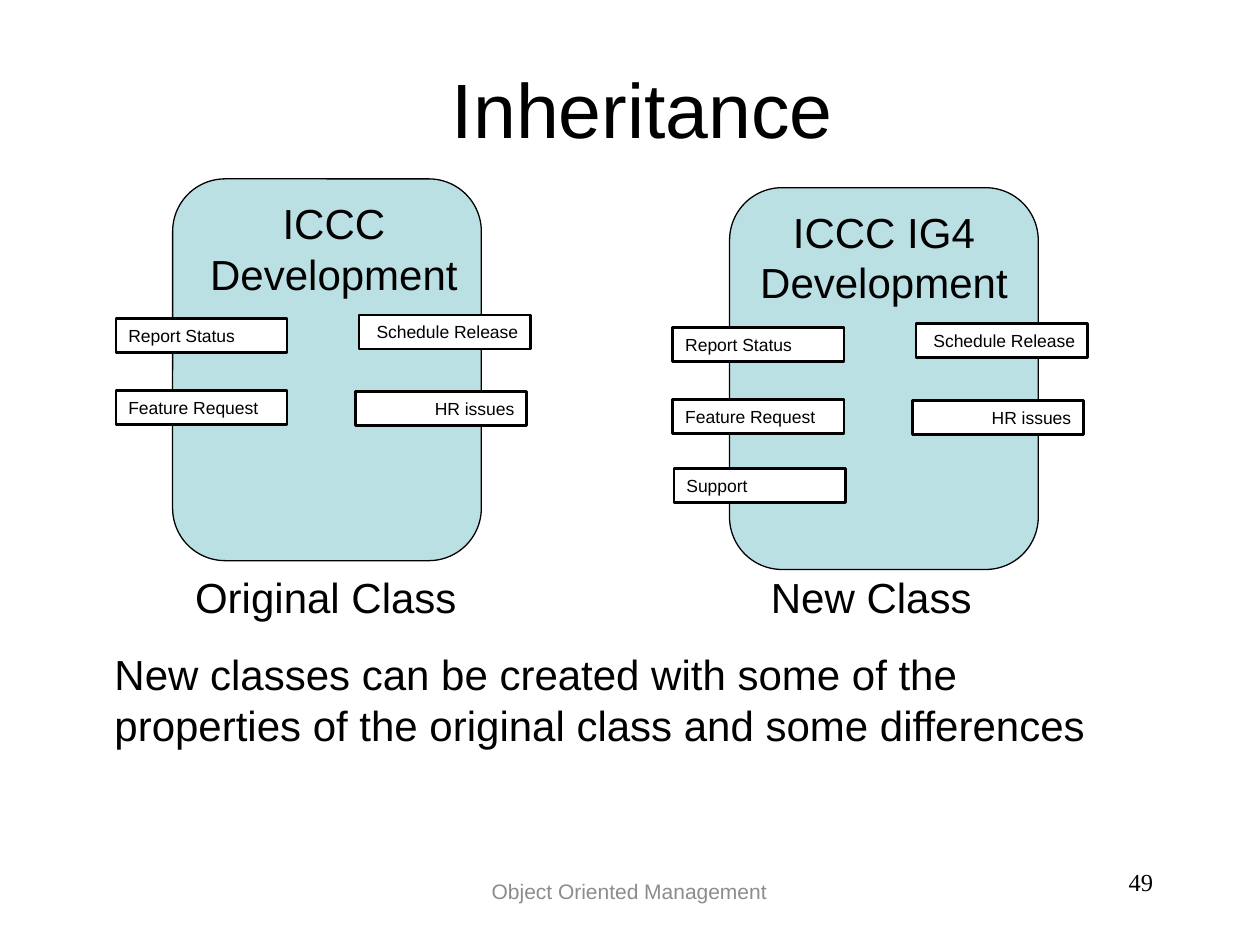
from lxml.etree import SubElement
from pptx import Presentation
from pptx.dml.color import RGBColor
from pptx.enum.shapes import MSO_SHAPE
from pptx.enum.text import MSO_ANCHOR, PP_ALIGN
from pptx.oxml.ns import qn
from pptx.util import Inches, Pt

COLORS = {"ink": "000000", "card": "BBE0E3", "label": "FFFFFF", "foot": "8C8C8C"}
COLS, ROWS = 100, 75
LEFT, MID, RIGHT = PP_ALIGN.LEFT, PP_ALIGN.CENTER, PP_ALIGN.RIGHT

LABELS = [
    ("Report Status", LEFT, -4.5, 11.1),
    ("Feature Request", LEFT, -4.5, 16.8),
    ("Schedule Release", RIGHT, 14.8, 10.8),
    ("HR issues", RIGHT, 14.5, 16.9),
]
CLASSES = [
    {"name": "ICCC Development", "at": (13.7, 14.2), "head": (1.4, 22.8),
     "labels": LABELS},
    {"name": "ICCC IG4 Development", "at": (57.9, 14.9), "head": (0.3, 23.9),
     "labels": LABELS + [("Support", LEFT, -4.4, 22.3)]},
]
CARD = (24.5, 30.3)
LABEL = (13.6, 2.7)
TABS = (6.4, 52.1)
BODY = [
    "\tOriginal Class\tNew Class",
    "New classes can be created with some of the properties of the "
    "original class and some differences",
]

deck = Presentation()
deck.slide_width, deck.slide_height = Inches(10), Inches(7.5)
slide = deck.slides.add_slide(deck.slide_layouts[6])


def color(key):
    return RGBColor.from_string(COLORS[key])


def place(x, y, w, h):
    dx, dy = deck.slide_width / COLS, deck.slide_height / ROWS
    return [round(v) for v in (x * dx, y * dy, w * dx, h * dy)]


def write(shape, lines, size, align=LEFT, ink="ink", face="Arial",
          anchor=MSO_ANCHOR.TOP, tabs=()):
    frame = shape.text_frame
    frame.word_wrap = True
    frame.vertical_anchor = anchor
    for i, line in enumerate(lines):
        para = frame.paragraphs[0] if i == 0 else frame.add_paragraph()
        para.text = line
        para.alignment = align
        if i:
            para.space_before = Pt(15)
        elif tabs:
            stops = SubElement(para._p.get_or_add_pPr(), qn("a:tabLst"))
            for tab in tabs:
                pos = place(tab, 0, 0, 0)[0]
                SubElement(stops, qn("a:tab"), pos=str(pos), algn="l")
        para.font.size = Pt(size)
        para.font.name = face
        para.font.color.rgb = color(ink)


def text(box, lines, size, **style):
    write(slide.shapes.add_textbox(*place(*box)), lines, size, **style)


def block(kind, box, fill, width):
    shape = slide.shapes.add_shape(kind, *place(*box))
    shape.shadow.inherit = False
    shape.fill.solid()
    shape.fill.fore_color.rgb = color(fill)
    shape.line.color.rgb = color("ink")
    shape.line.width = Pt(width)
    return shape


text((8.5, 4.4, 85, 8.3), ["Inheritance"], 44, align=MID, anchor=MSO_ANCHOR.MIDDLE)
for item in CLASSES:
    x, y = item["at"]
    card = block(MSO_SHAPE.ROUNDED_RECTANGLE, (x, y, *CARD), "card", 0.75)
    card.adjustments[0] = 0.17
    shift, wide = item["head"]
    text((x + shift, y + 1, wide, 9), [item["name"]], 24, align=MID)
    for name, align, dx, dy in item["labels"]:
        label = block(MSO_SHAPE.RECTANGLE, (x + dx, y + dy, *LABEL), "label", 1.5)
        write(label, [name], 10, align=align)

text((8.1, 44.9, 81.9, 15.1), BODY, 24, tabs=TABS)
text((29.5, 68.3, 40.9, 4.9), ["Object Oriented Management"], 12, align=MID,
     ink="foot", anchor=MSO_ANCHOR.MIDDLE)
text((71.7, 68.3, 20.8, 4.9), ["49"], 14, align=RIGHT, face="Times New Roman")

deck.save("out.pptx")
